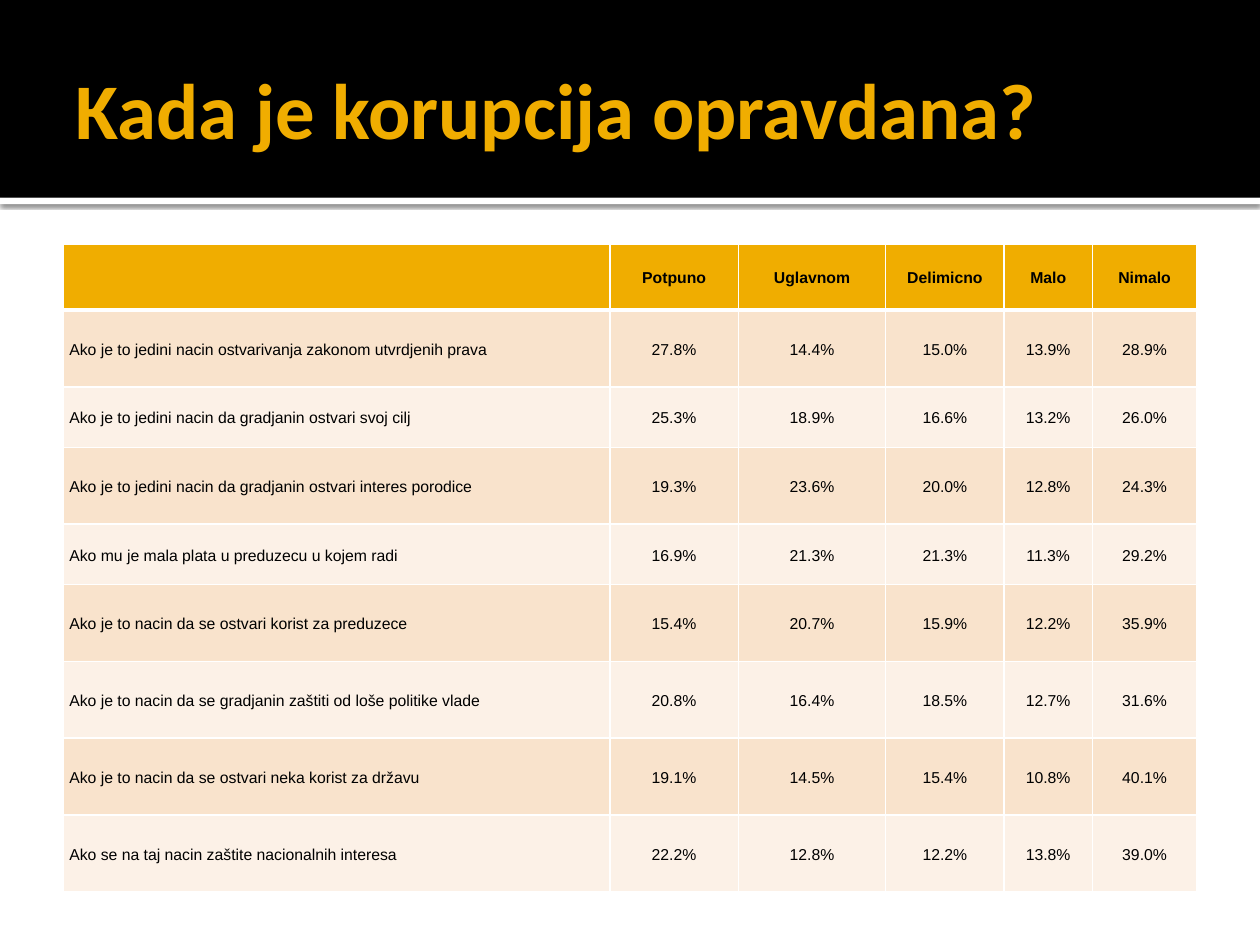
from lxml import etree
from pptx import Presentation
from pptx.dml.color import RGBColor
from pptx.enum.shapes import MSO_SHAPE
from pptx.enum.text import MSO_ANCHOR, MSO_AUTO_SIZE, PP_ALIGN
from pptx.oxml.ns import qn
from pptx.util import Inches, Pt

RECTANGLE = MSO_SHAPE.RECTANGLE
MIDDLE = MSO_ANCHOR.MIDDLE
NO_AUTOFIT = MSO_AUTO_SIZE.NONE
LEFT, CENTER = PP_ALIGN.LEFT, PP_ALIGN.CENTER

WIDTH, HEIGHT = 10, 7.5
MARGIN = WIDTH / 20
BAND_HEIGHT = 1.57
GOLD, BLACK, WHITE = "F0AD00", "000000", "FFFFFF"
ROW_FILLS = ("FCF1E7", "F9E3CC")  # even rows, odd rows

TALL, SHORT = 0.61, 0.48
COLUMN_WIDTHS = (4.34, 1.02, 1.17, 0.94, 0.7, 0.83)
ROW_HEIGHTS = (0.52, TALL, SHORT, TALL, SHORT, TALL, TALL, TALL, TALL)
ANSWERS = (
    ("", "Potpuno", "Uglavnom", "Delimicno", "Malo", "Nimalo"),
    ("Ako je to jedini nacin ostvarivanja zakonom utvrdjenih prava",
     "27.8%", "14.4%", "15.0%", "13.9%", "28.9%"),
    ("Ako je to jedini nacin da gradjanin ostvari svoj cilj",
     "25.3%", "18.9%", "16.6%", "13.2%", "26.0%"),
    ("Ako je to jedini nacin da gradjanin ostvari interes porodice",
     "19.3%", "23.6%", "20.0%", "12.8%", "24.3%"),
    ("Ako mu je mala plata u preduzecu u kojem radi",
     "16.9%", "21.3%", "21.3%", "11.3%", "29.2%"),
    ("Ako je to nacin da se ostvari korist za preduzece",
     "15.4%", "20.7%", "15.9%", "12.2%", "35.9%"),
    ("Ako je to nacin da se gradjanin zaštiti od loše politike vlade",
     "20.8%", "16.4%", "18.5%", "12.7%", "31.6%"),
    ("Ako je to nacin da se ostvari neka korist za državu",
     "19.1%", "14.5%", "15.4%", "10.8%", "40.1%"),
    ("Ako se na taj nacin zaštite nacionalnih interesa",
     "22.2%", "12.8%", "12.2%", "13.8%", "39.0%"),
)


def paint(fill, color):
    fill.solid()
    fill.fore_color.rgb = RGBColor.from_string(color)


def add_run(paragraph, text, font_name, size, color, bold):
    run = paragraph.add_run()
    run.text = text
    run.font.name = font_name
    run.font.size = Pt(size)
    run.font.bold = bold
    run.font.color.rgb = RGBColor.from_string(color)


def add_band(slide, top, height, color):
    """Add a plain rectangle across the whole slide."""
    band = slide.shapes.add_shape(
        RECTANGLE, 0, Inches(top), Inches(WIDTH), Inches(height))
    band.shadow.inherit = False
    paint(band.fill, color)
    band.line.fill.background()
    return band


def add_shadow(shape):
    """Cast a soft dark shadow straight down."""
    effects = shape.element.spPr.find(qn("a:effectLst"))
    shadow = etree.SubElement(
        effects, qn("a:outerShdw"), blurRad=str(Pt(2.5)), dist=str(Pt(0.8)),
        dir="5400000", algn="tl", rotWithShape="0")
    color = etree.SubElement(shadow, qn("a:srgbClr"), val=BLACK)
    etree.SubElement(color, qn("a:alpha"), val="60000")


def set_title(slide, text):
    title = slide.shapes.title
    title.left, title.top = Inches(MARGIN), Inches(0.17)
    title.width, title.height = Inches(WIDTH - 2 * MARGIN), Inches(1.37)
    frame = title.text_frame
    frame.auto_size = NO_AUTOFIT
    frame.word_wrap = True
    frame.vertical_anchor = MIDDLE
    frame.margin_left = Inches(0.1)
    frame.margin_top = frame.margin_right = frame.margin_bottom = Inches(0.05)
    paragraph = frame.paragraphs[0]
    paragraph.alignment = LEFT
    add_run(paragraph, text, "Calibri", 45, GOLD, True)
    title.element.getparent().append(title.element)  # in front of the bands


def add_borders(cell, top, bottom):
    """Draw white cell borders; top and bottom are widths in points."""
    properties = cell._tc.get_or_add_tcPr()
    for side, width in (("L", 1), ("R", 1), ("T", top), ("B", bottom)):
        line = etree.SubElement(properties, qn("a:ln" + side), w=str(Pt(width)))
        fill = etree.SubElement(line, qn("a:solidFill"))
        etree.SubElement(fill, qn("a:srgbClr"), val=WHITE)


def format_cell(cell, text, row, column):
    is_header = row == 0
    cell.vertical_anchor = MIDDLE
    cell.margin_left = cell.margin_right = Inches(0.05)
    cell.margin_top = cell.margin_bottom = 0
    add_borders(cell, 3 if row == 1 else 1, 3 if is_header else 1)
    paint(cell.fill, GOLD if is_header else ROW_FILLS[row % 2])
    if text:
        paragraph = cell.text_frame.paragraphs[0]
        paragraph.alignment = CENTER if column else LEFT
        paragraph.line_spacing = 1.15
        add_run(paragraph, text, "Arial", 9, BLACK, is_header)


def add_answer_table(slide):
    table = slide.shapes.add_table(
        len(ANSWERS), len(COLUMN_WIDTHS), Inches(MARGIN), Inches(1.94),
        Inches(sum(COLUMN_WIDTHS)), Inches(sum(ROW_HEIGHTS))).table
    for column, width in zip(table.columns, COLUMN_WIDTHS):
        column.width = Inches(width)
    for row, height in zip(table.rows, ROW_HEIGHTS):
        row.height = Inches(height)
    for row, texts in enumerate(ANSWERS):
        for column, text in enumerate(texts):
            format_cell(table.cell(row, column), text, row, column)


def main():
    presentation = Presentation()
    presentation.slide_width = Inches(WIDTH)
    presentation.slide_height = Inches(HEIGHT)
    slide = presentation.slides.add_slide(presentation.slide_layouts[5])
    paint(slide.background.fill, WHITE)
    add_shadow(add_band(slide, BAND_HEIGHT, 0.05, WHITE))
    add_band(slide, 0, BAND_HEIGHT, BLACK)
    set_title(slide, "Kada je korupcija opravdana?")
    add_answer_table(slide)
    presentation.save("out.pptx")


if __name__ == "__main__":
    main()
